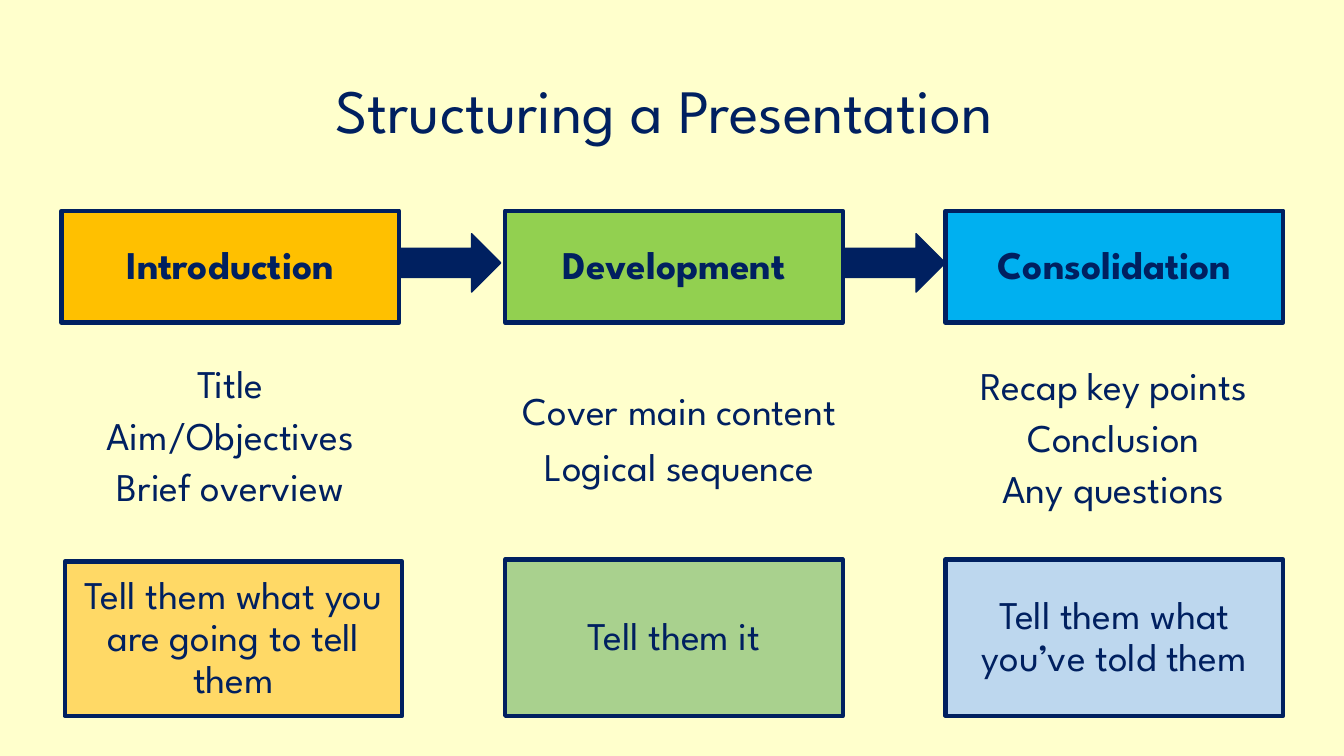
from pptx import Presentation
from pptx.dml.color import RGBColor
from pptx.enum.shapes import MSO_SHAPE as Kind
from pptx.enum.text import MSO_ANCHOR as Anchor, MSO_AUTO_SIZE as Fit, PP_ALIGN as Align
from pptx.util import Cm, Pt
from lxml.etree import SubElement

NAVY = RGBColor(0x00, 0x20, 0x60)
CREAM = RGBColor(0xFF, 0xFF, 0xCC)
AMBER = RGBColor(0xFF, 0xC0, 0x00)
GREEN = RGBColor(0x92, 0xD0, 0x50)
BLUE = RGBColor(0x00, 0xB0, 0xF0)
PALE_AMBER = RGBColor(0xFF, 0xD9, 0x66)
PALE_GREEN = RGBColor(0xA9, 0xD1, 0x8E)
PALE_BLUE = RGBColor(0xBD, 0xD7, 0xEE)
FONT = "League Spartan"
NS = "{http://schemas.openxmlformats.org/drawingml/2006/main}"


def write(shape, text, size=28, bold=False, lead=0.9, gap=10):
    """Set centred navy text without bullets."""
    frame = shape.text_frame
    frame.text = text
    frame.word_wrap = True
    frame.auto_size = Fit.NONE
    frame.vertical_anchor = Anchor.MIDDLE
    for para in frame.paragraphs:
        para.alignment = Align.CENTER
        para.line_spacing = lead
        para.space_before = Pt(gap)
        props = para._p.get_or_add_pPr()
        props.set("marL", "0")
        props.set("indent", "0")
        SubElement(props, NS + "buNone")
        for run in para.runs:
            font = run.font
            font.name, font.size, font.bold = FONT, Pt(size), bold
            font.color.rgb = NAVY


def paint(shape, color, width=3):
    """Fill a shape and give it a navy outline."""
    shape.fill.solid()
    shape.fill.fore_color.rgb = color
    shape.line.color.rgb = NAVY
    shape.line.width = Pt(width)


deck = Presentation()
deck.slide_width, deck.slide_height = Cm(33.87), Cm(19.05)
slide = deck.slides.add_slide(deck.slide_layouts[1])
slide.background.fill.solid()
slide.background.fill.fore_color.rgb = CREAM
shapes = slide.shapes

# Title
title = shapes.title
title.left, title.top, title.width, title.height = Cm(2.33), Cm(1.01), Cm(29.21), Cm(3.68)
write(title, "Structuring a Presentation ", size=44, gap=0)

# Stage headings: the first one is the body placeholder
WIDE = 8.51
stages = [
    (1.55, "Introduction", AMBER),
    (12.73, "Development", GREEN),
    (23.83, "Consolidation", BLUE),
]
for num, (left, name, color) in enumerate(stages):
    area = Cm(left), Cm(5.31), Cm(WIDE), Cm(2.82)
    if num == 0:
        head = slide.placeholders[1]
        head.left, head.top, head.width, head.height = area
    else:
        head = shapes.add_shape(Kind.RECTANGLE, *area)
        head.shadow.inherit = False
    paint(head, color)
    write(head, name, bold=True)

# What each stage holds
lists = [
    (1.55, 9.09, WIDE, 0.8, "Title\nAim/Objectives\nBrief overview"),
    (12.5, 9.14, 9.25, 0.9, "Cover main content\nLogical sequence"),
    (23.44, 9.14, 9.25, 0.8, "Recap key points\nConclusion\nAny questions"),
]
for left, top, width, lead, text in lists:
    box = shapes.add_textbox(Cm(left), Cm(top), Cm(width), Cm(3.94))
    write(box, text, lead=lead)

# What to tell the audience: all boxes share one bottom edge
BASE = 18.04
tells = [
    (1.63, 14.15, "Tell them what you are going to tell them", PALE_AMBER),
    (12.73, 14.1, "Tell them it", PALE_GREEN),
    (23.83, 14.1, "Tell them what you’ve told them", PALE_BLUE),
]
for left, top, text, color in tells:
    tell = shapes.add_shape(Kind.RECTANGLE, Cm(left), Cm(top), Cm(WIDE), Cm(BASE - top))
    tell.shadow.inherit = False
    paint(tell, color)
    write(tell, text)

# Arrows from stage to stage
for left in (10.03, 21.23):
    arrow = shapes.add_shape(Kind.RIGHT_ARROW, Cm(left), Cm(5.89), Cm(2.59), Cm(1.47))
    arrow.shadow.inherit = False
    paint(arrow, NAVY, width=1)

deck.save("out.pptx")
